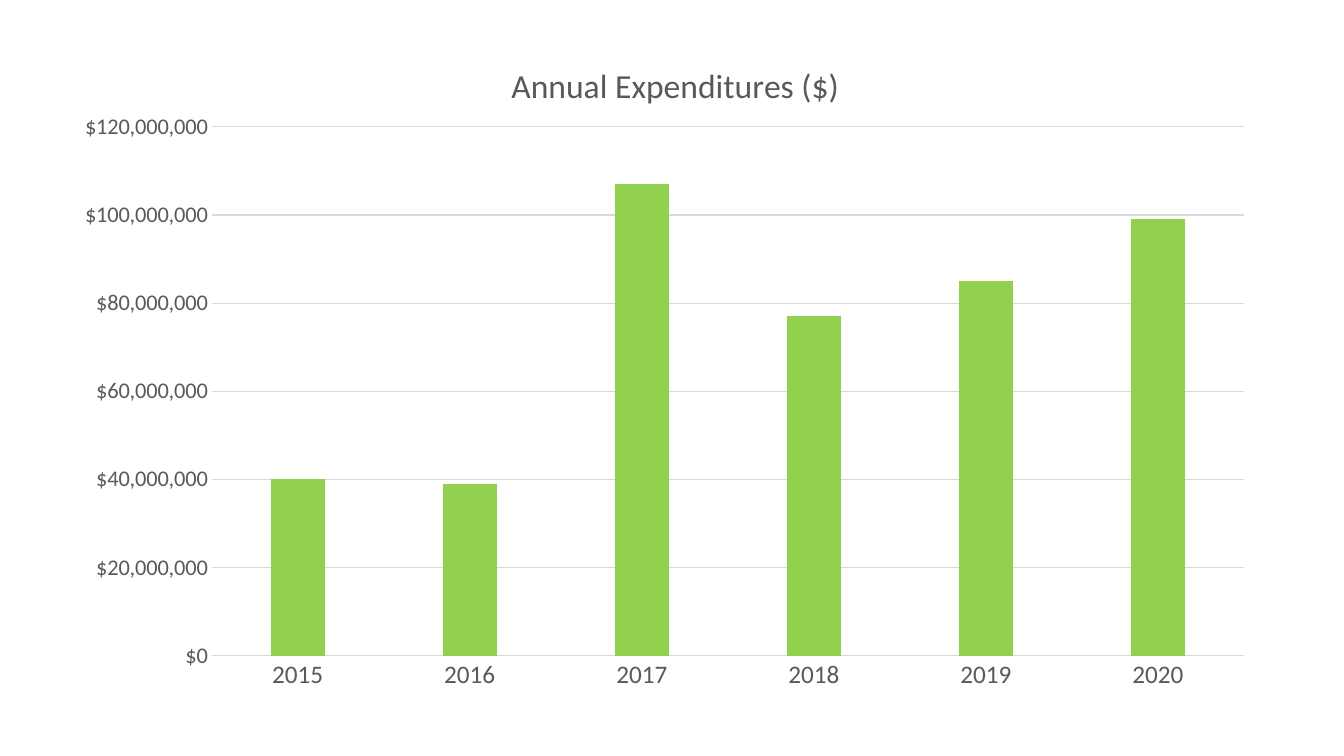
from dataclasses import dataclass

import pptx
import pptx.chart.data
import pptx.dml.color
import pptx.enum.chart
import pptx.oxml
import pptx.oxml.ns
import pptx.util
from pptx.util import Inches

TEXT_GREY = pptx.dml.color.RGBColor(0x59, 0x59, 0x59)
LINE_GREY = pptx.dml.color.RGBColor(0xD9, 0xD9, 0xD9)
BAR_GREEN = pptx.dml.color.RGBColor(0x92, 0xD0, 0x50)
FONT_NAME = "Calibri"
TITLE = "Annual Expenditures ($)"
DOLLARS = '"$"#,##0'


@dataclass
class Expenditure:
    year: str
    dollars: int


EXPENDITURES = [
    Expenditure("2015", 40_000_000),
    Expenditure("2016", 39_000_000),
    Expenditure("2017", 107_000_000),
    Expenditure("2018", 77_000_000),
    Expenditure("2019", 85_000_000),
    Expenditure("2020", 99_000_000),
]


def style_font(font, size: int) -> None:
    font.name = FONT_NAME
    font.size = pptx.util.Pt(size)
    font.bold = False
    font.color.rgb = TEXT_GREY


def style_line(line) -> None:
    line.color.rgb = LINE_GREY
    line.width = pptx.util.Pt(0.75)


def set_layout(parent, index: int, settings: dict[str, str | float]) -> None:
    """Place a chart part by fractions of the chart area."""
    for old_layout in parent.findall(pptx.oxml.ns.qn("c:layout")):
        parent.remove(old_layout)
    entries = "".join(f'<c:{tag} val="{value}"/>' for tag, value in settings.items())
    parent.insert(index, pptx.oxml.parse_xml(
        f'<c:layout {pptx.oxml.ns.nsdecls("c")}>'
        f"<c:manualLayout>{entries}</c:manualLayout></c:layout>"))


def style_title(chart) -> None:
    chart.has_title = True
    title = chart.chart_title
    title.include_in_layout = False
    title.text_frame.text = TITLE
    style_font(title.text_frame.paragraphs[0].runs[0].font, 24)
    set_layout(title._element, 1,
               {"xMode": "edge", "yMode": "edge", "x": 0.39, "y": 0.03})


def style_axes(chart) -> None:
    years, dollars = chart.category_axis, chart.value_axis
    for axis, size in ((years, 18), (dollars, 16)):
        axis.major_tick_mark = pptx.enum.chart.XL_TICK_MARK.NONE
        axis.minor_tick_mark = pptx.enum.chart.XL_TICK_MARK.NONE
        style_font(axis.tick_labels.font, size)
    style_line(years.format.line)

    dollars.minimum_scale = 0
    dollars.maximum_scale = 120_000_000
    dollars.major_unit = 20_000_000
    dollars.tick_labels.number_format = DOLLARS
    dollars.tick_labels.number_format_is_linked = False
    dollars.format.line.fill.background()
    style_line(dollars.major_gridlines.format.line)


def style_bars(chart) -> None:
    plot = chart.plots[0]
    plot.gap_width = 219
    plot.overlap = -27
    plot.vary_by_categories = False
    bar_fill = plot.series[0].format.fill
    bar_fill.solid()
    bar_fill.fore_color.rgb = BAR_GREEN
    set_layout(chart._chartSpace.chart.plotArea, 0,
               {"layoutTarget": "inner", "xMode": "edge", "yMode": "edge",
                "x": 0.148, "y": 0.129, "w": 0.851, "h": 0.753})


def add_expenditure_chart(slide) -> None:
    data = pptx.chart.data.CategoryChartData(number_format=DOLLARS)
    data.categories = [item.year for item in EXPENDITURES]
    data.add_series(TITLE, [item.dollars for item in EXPENDITURES])
    chart = slide.shapes.add_chart(
        pptx.enum.chart.XL_CHART_TYPE.COLUMN_CLUSTERED,
        Inches(0.32), Inches(0.36), Inches(12.03), Inches(6.97), data).chart
    chart.has_legend = False
    chart.font.name = FONT_NAME
    chart.font.size = pptx.util.Pt(10)
    style_title(chart)
    style_axes(chart)
    style_bars(chart)


def main() -> None:
    deck = pptx.Presentation()
    deck.slide_width = Inches(13.33)
    deck.slide_height = Inches(7.5)
    add_expenditure_chart(deck.slides.add_slide(deck.slide_layouts[6]))
    deck.save("out.pptx")


if __name__ == "__main__":
    main()
